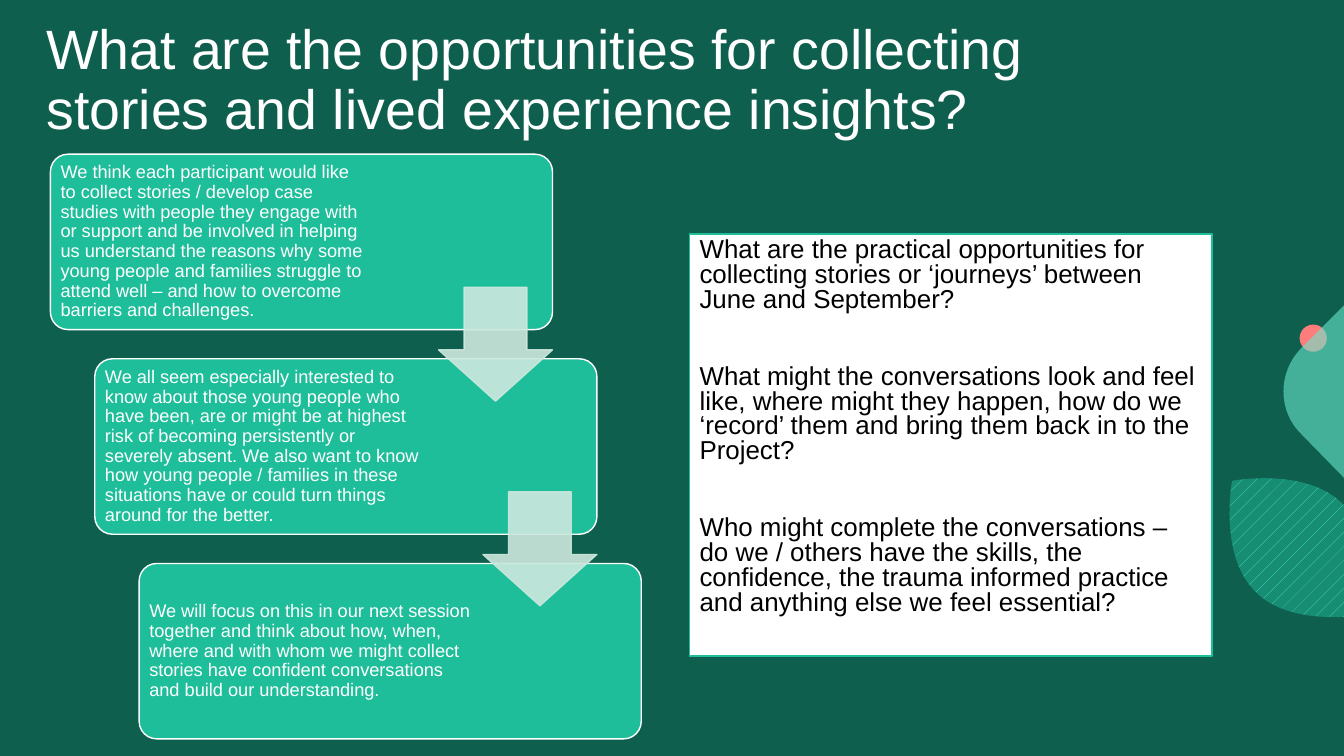
from lxml import etree
from pptx import Presentation
from pptx.dml.color import RGBColor
from pptx.enum.dml import MSO_PATTERN
from pptx.enum.shapes import MSO_SHAPE
from pptx.enum.text import MSO_ANCHOR, MSO_AUTO_SIZE, PP_ALIGN
from pptx.oxml.ns import qn
from pptx.util import Pt

PX = 9144  # 100 px to the inch
CURVE_STEPS = 16
COLORS = {
    "background": "0F5F4F",
    "coral": "FD7C7C",
    "leaf": "178E74",
    "leaf_dots": "4BE3C2",
    "mint": "69E7CC",
    "card": "1EBE9B",
    "arrow": "CDE8DE",
    "white": "FFFFFF",
    "black": "000000",
}
RGB = {name: RGBColor.from_string(value) for name, value in COLORS.items()}


def paint(shape, fill, line=None, opacity=100):
    """Set a solid fill and a 1 pt outline, with opacity in percent."""
    shape.shadow.inherit = False
    shape.fill.solid()
    shape.fill.fore_color.rgb = RGB[fill]
    if line:
        shape.line.color.rgb = RGB[line]
        shape.line.width = Pt(1)
    else:
        shape.line.fill.background()
    if opacity < 100:
        for color in shape._element.spPr.iter(qn("a:srgbClr")):
            etree.SubElement(color, qn("a:alpha"), val=str(opacity * 1000))


def write(paragraph, text, size, color, line_spacing):
    paragraph.alignment = PP_ALIGN.LEFT
    paragraph.line_spacing = line_spacing
    run = paragraph.add_run()
    run.text = text
    run.font.name = "Arial"
    run.font.size = Pt(size)
    run.font.color.rgb = RGB[color]


presentation = Presentation()
presentation.slide_width = 1333 * PX
presentation.slide_height = 750 * PX
slide = presentation.slides.add_slide(presentation.slide_layouts[5])
shapes = slide.shapes
slide.background.fill.solid()
slide.background.fill.fore_color.rgb = RGB["background"]

# Decoration at the right edge
dot = shapes.add_shape(MSO_SHAPE.OVAL, 1289 * PX, 322 * PX, 27 * PX, 27 * PX)
paint(dot, "coral")

# Each outline: straight points, then cubic curves that go on from the last point
outlines = [
    ("leaf", 100, [(1330, 612), (1333, 612), (1333, 501), (1332, 500)],
     [[(1296, 463), (1222, 477), (1222, 477)],
      [(1222, 477), (1208, 550), (1245, 587)],
      [(1268, 610), (1305, 613), (1330, 612)]]),
    ("mint", 60, [(1333, 303), (1333, 474), (1291, 431)],
     [[(1267, 408), (1267, 369), (1291, 345)]]),
]
for fill, opacity, points, curves in outlines:
    for first_control, second_control, end in curves:
        start = points[-1]
        for step in range(1, CURVE_STEPS + 1):
            t = step / CURVE_STEPS
            points.append(tuple(
                a * (1 - t) ** 3 + 3 * b * t * (1 - t) ** 2 + 3 * c * t ** 2 * (1 - t) + d * t ** 3
                for a, b, c, d in zip(start, first_control, second_control, end)))
    corners = [(round(x * PX), round(y * PX)) for x, y in points]
    builder = shapes.build_freeform(*corners[0])
    builder.add_line_segments(corners[1:], close=True)
    outline = builder.convert_to_shape()
    paint(outline, fill, opacity=opacity)
    if fill == "leaf":
        outline.fill.patterned()
        outline.fill.pattern = MSO_PATTERN.PERCENT_5
        outline.fill.fore_color.rgb = RGB["leaf_dots"]
        outline.fill.back_color.rgb = RGB["leaf"]

# Title
title = shapes.title
title.left, title.top, title.width, title.height = 36 * PX, 17 * PX, 1143 * PX, 128 * PX
title.text_frame.word_wrap = True
title.text_frame.auto_size = MSO_AUTO_SIZE.NONE
title.text_frame.vertical_anchor = MSO_ANCHOR.BOTTOM
write(title.text_frame.paragraphs[0],
      "What are the opportunities for collecting stories and lived experience insights?",
      39.6, "white", 0.9)

# Staircase of cards, each with the space kept free at its right
STEP_X, STEP_Y = 44, 203
cards = [
    ("We think each participant would like to collect stories / develop case studies with people "
     "they engage with or support and be involved in helping us understand the reasons why some "
     "young people and families struggle to attend well – and how to overcome barriers and "
     "challenges.", 183),
    ("We all seem especially interested to know about those young people who have been, are or "
     "might be at highest risk of becoming persistently or severely absent. We also want to know "
     "how young people / families in these situations have or could turn things around for the "
     "better.", 163),
    ("We will focus on this in our next session together and think about how, when, where and "
     "with whom we might collect stories have confident conversations and build our "
     "understanding.", 163),
]
for index, (text, right_margin) in enumerate(cards):
    card = shapes.add_shape(MSO_SHAPE.ROUNDED_RECTANGLE, (50 + index * STEP_X) * PX,
                            (153 + index * STEP_Y) * PX, 498 * PX, 174 * PX)
    card.adjustments[0] = 0.1
    paint(card, "card", "white")
    frame = card.text_frame
    frame.word_wrap = True
    frame.vertical_anchor = MSO_ANCHOR.MIDDLE
    frame.margin_left = frame.margin_top = frame.margin_bottom = 5 * PX
    frame.margin_right = right_margin * PX
    write(frame.paragraphs[0], text, 13, "white", 0.9)

for index in range(len(cards) - 1):
    arrow = shapes.add_shape(MSO_SHAPE.DOWN_ARROW, (435 + index * STEP_X) * PX,
                             (285 + index * STEP_Y) * PX, 113 * PX, 113 * PX)
    arrow.adjustments[0] = 0.55
    arrow.adjustments[1] = 0.45
    paint(arrow, "arrow", "arrow", opacity=90)

# Question panel
questions = [
    "What are the practical opportunities for collecting stories or ‘journeys’ between June and "
    "September?",
    "What might the conversations look and feel like, where might they happen, how do we ‘record’ "
    "them and bring them back in to the Project?",
    "Who might complete the conversations – do we / others have the skills, the confidence, the "
    "trauma informed practice and anything else we feel essential?",
]
panel = shapes.add_shape(MSO_SHAPE.RECTANGLE, 684 * PX, 232 * PX, 518 * PX, 419 * PX)
paint(panel, "white", "card")
panel.text_frame.word_wrap = True
panel.text_frame.vertical_anchor = MSO_ANCHOR.TOP
for index, question in enumerate(questions):
    paragraph = panel.text_frame.add_paragraph() if index else panel.text_frame.paragraphs[0]
    if index:
        paragraph.space_before = Pt(37)
    write(paragraph, question, 18.5, "black", 0.8)

presentation.save("out.pptx")
